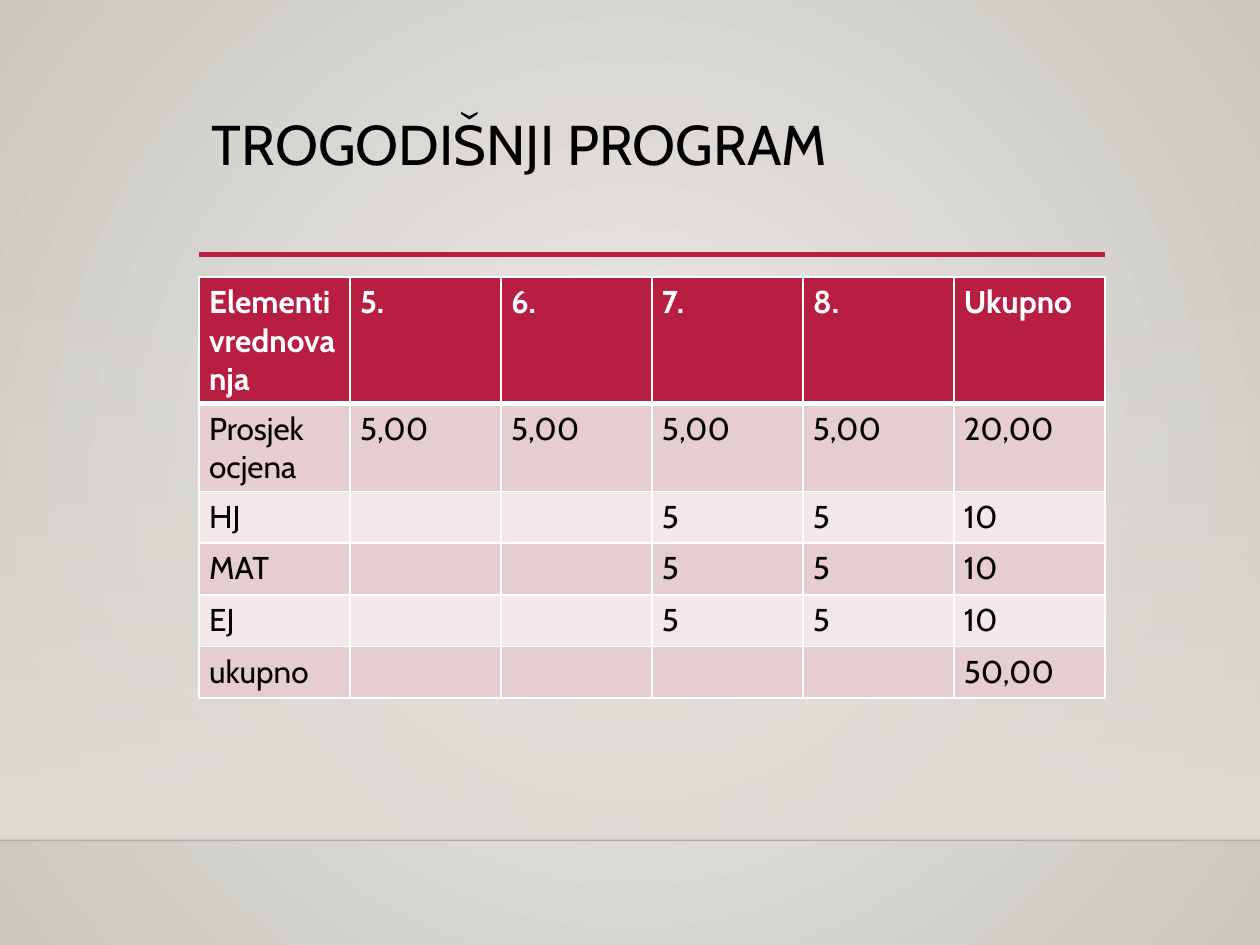
from lxml.etree import SubElement
from pptx import Presentation
from pptx.dml.color import RGBColor
from pptx.enum.shapes import MSO_CONNECTOR, MSO_SHAPE
from pptx.enum.text import MSO_ANCHOR
from pptx.oxml import parse_xml
from pptx.oxml.ns import nsdecls, qn
from pptx.util import Inches, Pt

FONT = "Cabin"
RED, WHITE, BLACK = "B71E42", "FFFFFF", "000000"
BANDS = ["E6CDCF", "F3E8E9"]
ROWS = [
    ["Elementi vrednovanja", "5.", "6.", "7.", "8.", "Ukupno"],
    ["Prosjek ocjena", "5,00", "5,00", "5,00", "5,00", "20,00"],
    ["HJ", "", "", "5", "5", "10"],
    ["MAT", "", "", "5", "5", "10"],
    ["EJ", "", "", "5", "5", "10"],
    ["ukupno", "", "", "", "", "50,00"],
]


def color(value):
    """Turn a hex string into a colour."""
    return RGBColor.from_string(value)


def gradient(start, end, direction, start_alpha=100):
    """Build a two-stop gradient fill element."""
    return parse_xml(
        f'<a:gradFill {nsdecls("a")} rotWithShape="1"><a:gsLst>'
        f'<a:gs pos="0"><a:srgbClr val="{start}"><a:alpha val="{start_alpha * 1000}"/></a:srgbClr></a:gs>'
        f'<a:gs pos="100000"><a:srgbClr val="{end}"/></a:gs>'
        f'</a:gsLst>{direction}</a:gradFill>'
    )


def style_text(para, size, shade, bold=False):
    """Set the font of a paragraph."""
    para.font.name = FONT
    para.font.size = Pt(size)
    para.font.bold = bold
    para.font.color.rgb = color(shade)


def add_rule(page, left, top, width, shade, weight, alpha=100):
    """Draw a horizontal line."""
    rule = page.shapes.add_connector(
        MSO_CONNECTOR.STRAIGHT, Inches(left), Inches(top), Inches(left + width), Inches(top))
    rule.line.color.rgb = color(shade)
    rule.line.width = Pt(weight)
    SubElement(rule.element.spPr, qn("a:effectLst"))
    if alpha < 100:
        shade_element = next(rule.element.spPr.iter(qn("a:srgbClr")))
        SubElement(shade_element, qn("a:alpha"), val=str(alpha * 1000))


def add_backdrop(page, width, top, height):
    """Paint the radial background, the fading wall and the floor line."""
    page.background.fill.solid()
    properties = next(page.element.iter(qn("p:bgPr")))
    circle = '<a:path path="circle"><a:fillToRect l="50000" t="50000" r="50000" b="50000"/></a:path>'
    properties.replace(properties[0], gradient("ECEAE7", "CAC7C1", circle))
    wall = page.shapes.add_shape(
        MSO_SHAPE.RECTANGLE, 0, Inches(top), Inches(width), Inches(height))
    wall.shadow.inherit = False
    wall.line.fill.background()
    wall.fill.solid()
    solid = wall.element.spPr.find(qn("a:solidFill"))
    downward = '<a:lin ang="5400000" scaled="0"/>'
    wall.element.spPr.replace(solid, gradient("DFDBD5", "DFDBD5", downward, 0))
    add_rule(page, 0, top + height, width, "000001", 1, 20)


def add_title(page, left, top, width, height):
    """Write the title above its red rule."""
    box = page.shapes.add_textbox(Inches(left), Inches(top), Inches(width), Inches(height))
    frame = box.text_frame
    frame.word_wrap = True
    frame.vertical_anchor = MSO_ANCHOR.TOP
    para = frame.paragraphs[0]
    para.text = "TROGODIŠNJI PROGRAM"
    para.line_spacing = 0.9
    style_text(para, 32, BLACK)
    add_rule(page, left, top + height, width, RED, 2.5)


def set_borders(cell, top, bottom):
    """Give a cell white borders of the given top and bottom weights."""
    properties = cell._tc.get_or_add_tcPr()
    weights = {"lnL": 1, "lnR": 1, "lnT": top, "lnB": bottom}
    for index, (side, weight) in enumerate(weights.items()):
        properties.insert(index, parse_xml(
            f'<a:{side} {nsdecls("a")} w="{Pt(weight)}"><a:solidFill>'
            f'<a:srgbClr val="{WHITE}"/></a:solidFill></a:{side}>'))


def add_points_table(page, left, top, width, height):
    """Fill the table of points by grade and element."""
    table = page.shapes.add_table(
        len(ROWS), len(ROWS[0]), Inches(left), Inches(top), Inches(width), Inches(height)).table
    for row, texts in enumerate(ROWS):
        table.rows[row].height = Inches(0.41)
        header = row == 0
        for column, text in enumerate(texts):
            cell = table.cell(row, column)
            cell.margin_left = cell.margin_right = Inches(0.08)
            cell.fill.solid()
            cell.fill.fore_color.rgb = color(RED if header else BANDS[(row - 1) % 2])
            set_borders(cell, 3 if row == 1 else 1, 3 if header else 1)
            para = cell.text_frame.paragraphs[0]
            if text:
                para.text = text
            style_text(para, 18, WHITE if header else BLACK, header)


def main():
    """Build the deck."""
    deck = Presentation()
    deck.slide_width, deck.slide_height = Inches(10), Inches(7.5)
    page = deck.slides.add_slide(deck.slide_layouts[6])
    add_backdrop(page, 10, 2.2, 4.47)
    add_title(page, 1.58, 0.88, 7.19, 1.14)
    add_points_table(page, 1.58, 2.2, 7.19, 2.46)
    deck.save("out.pptx")


if __name__ == "__main__":
    main()
